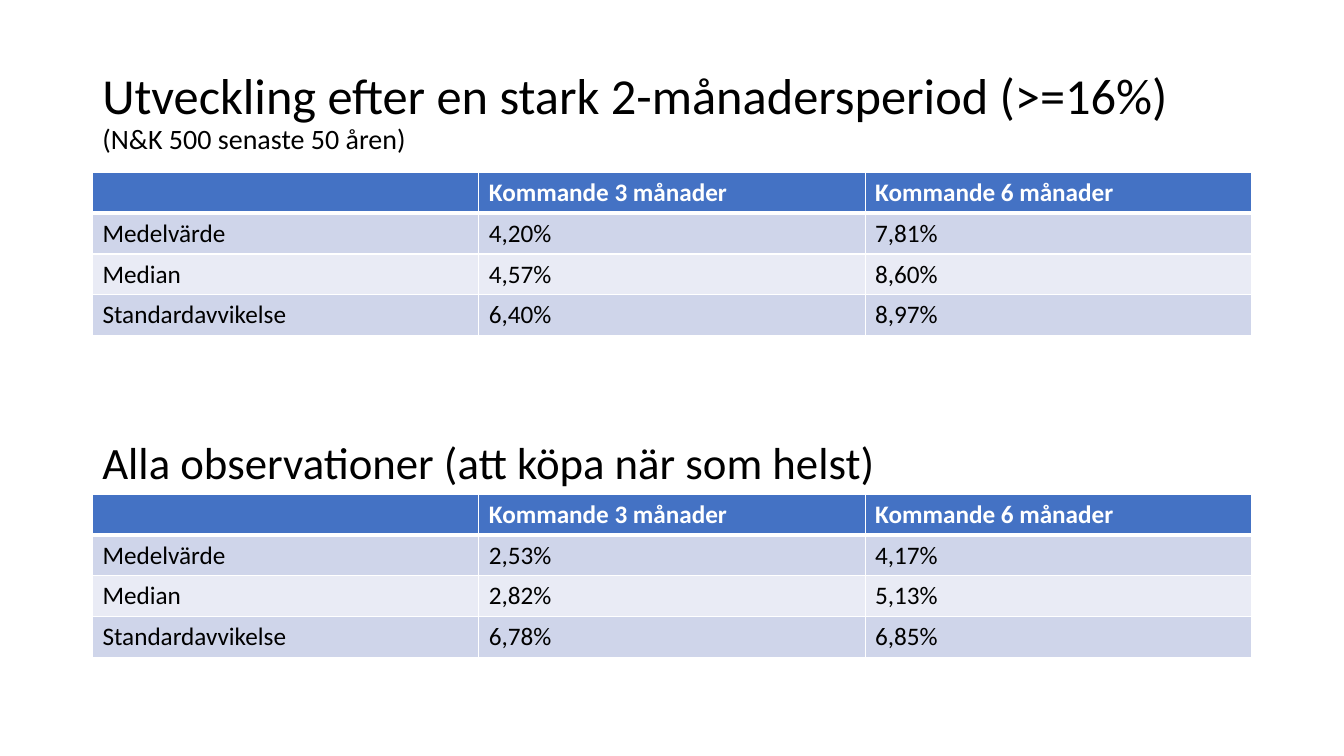
from lxml import etree
from pptx import Presentation
from pptx.dml.color import RGBColor
from pptx.enum.text import MSO_ANCHOR
from pptx.oxml.ns import qn
from pptx.util import Cm, Pt

TOP, MIDDLE = MSO_ANCHOR.TOP, MSO_ANCHOR.MIDDLE
BLACK = RGBColor(0x00, 0x00, 0x00)
WHITE = RGBColor(0xFF, 0xFF, 0xFF)
BLUE = RGBColor(0x44, 0x72, 0xC4)
BANDS = (RGBColor(0xCF, 0xD5, 0xEA), RGBColor(0xE9, 0xEB, 0xF5))

LEFT, WIDTH, ROW_HEIGHT = 2.33, 29.21, 1.03
HEADER = ("", "Kommande 3 månader", "Kommande 6 månader")


class SlideBuilder:
    font = "Calibri"

    def __init__(self, prs):
        self.slide = prs.slides.add_slide(prs.slide_layouts[6])

    def add_run(self, p, text, size, color=BLACK, bold=False):
        r = p.add_run()
        r.text = text
        r.font.name = self.font
        r.font.size = Pt(size)
        r.font.bold = bold
        r.font.color.rgb = color

    def heading(self, top, width, height, lines, anchor=TOP, spacing=1.0):
        sp = self.slide.shapes.add_textbox(Cm(LEFT), Cm(top), Cm(width), Cm(height))
        tf = sp.text_frame
        tf.word_wrap = True
        tf.vertical_anchor = anchor
        p = tf.paragraphs[0]
        p.line_spacing = spacing
        for i, (text, size) in enumerate(lines):
            if i:
                p.add_line_break()
            self.add_run(p, text, size)

    def border(self, cell, side, width):
        ln = etree.SubElement(cell._tc.get_or_add_tcPr(), qn(f"a:ln{side}"), w=str(Pt(width)))
        fill = etree.SubElement(ln, qn("a:solidFill"))
        etree.SubElement(fill, qn("a:srgbClr"), val=str(WHITE))

    def table(self, top, body):
        rows = (HEADER, *body)
        frame = self.slide.shapes.add_table(
            len(rows), len(HEADER), Cm(LEFT), Cm(top), Cm(WIDTH), Cm(ROW_HEIGHT * len(rows)))
        table = frame.table
        table.first_row = table.horz_banding = False
        for i, row in enumerate(rows):
            table.rows[i].height = Cm(ROW_HEIGHT)
            is_header = i == 0
            widths = {"L": 1, "R": 1, "T": 3 if i == 1 else 1, "B": 3 if is_header else 1}
            for j, text in enumerate(row):
                cell = table.cell(i, j)
                for side, width in widths.items():
                    self.border(cell, side, width)
                cell.fill.solid()
                cell.fill.fore_color.rgb = BLUE if is_header else BANDS[(i - 1) % 2]
                if text:
                    color = WHITE if is_header else BLACK
                    self.add_run(cell.text_frame.paragraphs[0], text, 18, color, is_header)


def main():
    prs = Presentation()
    prs.slide_width, prs.slide_height = Cm(33.87), Cm(19.05)
    s = SlideBuilder(prs)
    s.heading(1.01, WIDTH, 3.68, [
        ("Utveckling efter en stark 2-månadersperiod (>=16%)", 36),
        ("(N&K 500 senaste 50 åren)", 20),
    ], MIDDLE, 0.9)
    s.table(4.34, [
        ("Medelvärde", "4,20%", "7,81%"),
        ("Median", "4,57%", "8,60%"),
        ("Standardavvikelse", "6,40%", "8,97%"),
    ])
    s.heading(10.82, 20.09, 3, [("Alla observationer (att köpa när som helst)", 32)])
    s.table(12.45, [
        ("Medelvärde", "2,53%", "4,17%"),
        ("Median", "2,82%", "5,13%"),
        ("Standardavvikelse", "6,78%", "6,85%"),
    ])
    prs.save("out.pptx")


if __name__ == "__main__":
    main()
